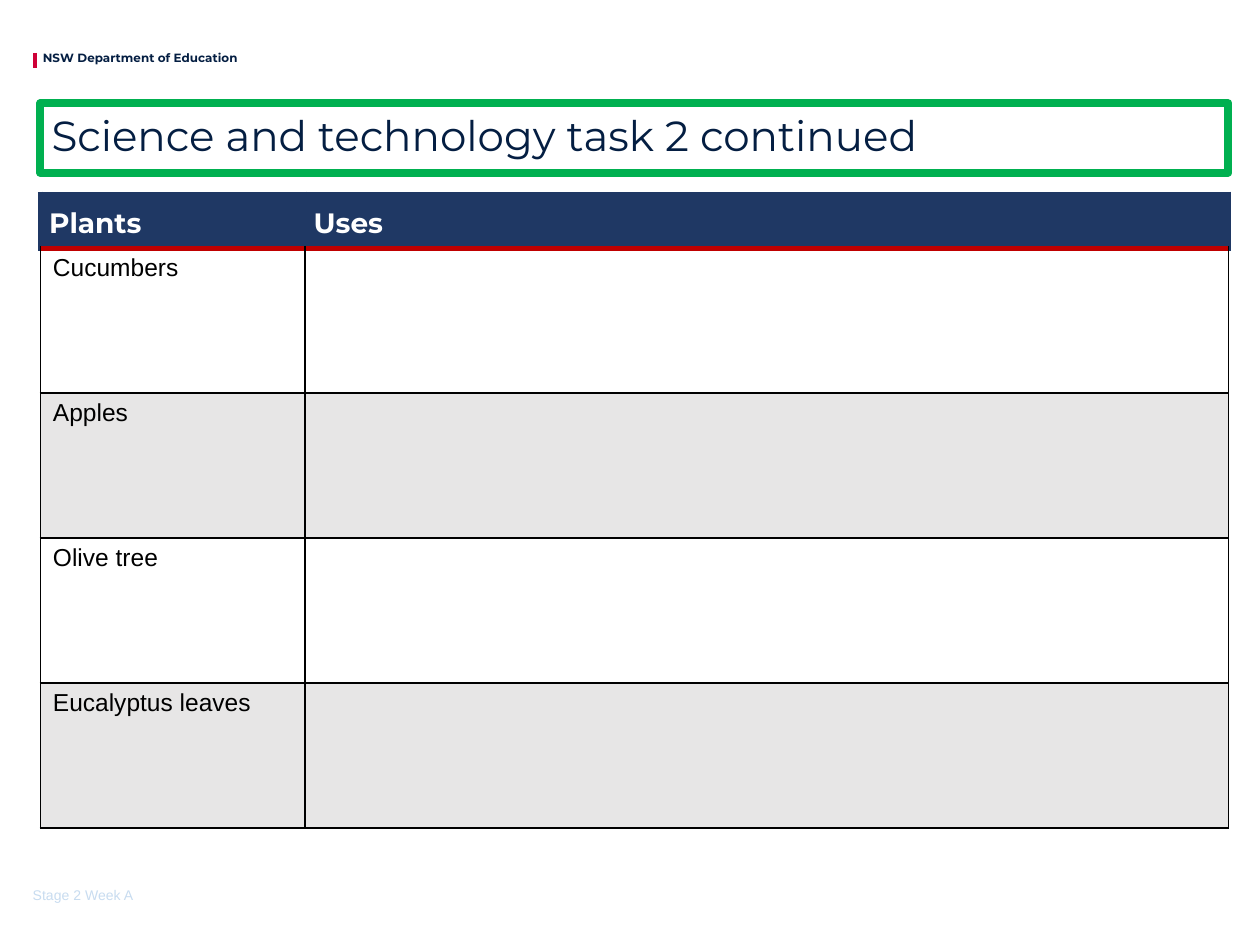
from typing import NamedTuple

from lxml.etree import SubElement
from pptx import Presentation
from pptx.dml.color import RGBColor
from pptx.enum.shapes import MSO_CONNECTOR, MSO_SHAPE
from pptx.enum.text import MSO_ANCHOR, PP_ALIGN
from pptx.oxml.ns import qn
from pptx.util import Inches, Pt

NAVY = RGBColor(0x04, 0x1E, 0x42)
HEADER_BLUE = RGBColor(0x1F, 0x38, 0x64)
RED = RGBColor(0xCE, 0x00, 0x37)
DARK_RED = RGBColor(0xC0, 0x00, 0x00)
GREEN = RGBColor(0x00, 0xB0, 0x50)
PALE_BLUE = RGBColor(0xC8, 0xDC, 0xF0)
GREY = RGBColor(0xE7, 0xE6, 0xE6)
BLACK = RGBColor(0x00, 0x00, 0x00)
WHITE = RGBColor(0xFF, 0xFF, 0xFF)

HEADINGS = ("Plants", "Uses")
PLANTS = ("Cucumbers", "Apples", "Olive tree", "Eucalyptus leaves")
COLUMN_WIDTHS = (2.1, 7.33)
HEADER_HEIGHT, ROW_HEIGHT = 0.43, 1.15


class TextStyle(NamedTuple):
    font: str
    size: float
    color: RGBColor
    bold: bool = False
    spacing: float = 1.0


class Border(NamedTuple):
    color: RGBColor
    width: float


class Label(NamedTuple):
    text: str
    box: tuple[float, float, float, float]
    anchor: MSO_ANCHOR
    style: TextStyle


TITLE_STYLE = TextStyle("Montserrat", 24, NAVY, spacing=0.9)
HEADING_STYLE = TextStyle("Montserrat", 16, WHITE, True, 1.15)
BODY_STYLE = TextStyle("Arial", 14, BLACK)
HEADER_EDGE = Border(HEADER_BLUE, 3)
HEADER_RULE = Border(DARK_RED, 3)
GRID = Border(BLACK, 1)

LABELS = (
    Label("NSW Department of Education", (0.34, 0.4, 2.03, 0.11),
          MSO_ANCHOR.TOP, TextStyle("Montserrat", 6.8, NAVY, True)),
    Label("Stage 2 Week A", (0.26, 6.77, 1.15, 0.4),
          MSO_ANCHOR.BOTTOM, TextStyle("Arial", 8, PALE_BLUE)),
)


def write(tf, text: str, style: TextStyle) -> None:
    p = tf.paragraphs[0]
    p.text = text
    p.alignment = PP_ALIGN.LEFT
    p.line_spacing = style.spacing
    p.font.name = style.font
    p.font.size = Pt(style.size)
    p.font.bold = style.bold
    p.font.color.rgb = style.color


def clear_margins(tf) -> None:
    tf.margin_left = tf.margin_top = tf.margin_right = tf.margin_bottom = 0


def add_label(s, label: Label) -> None:
    tf = s.shapes.add_textbox(*map(Inches, label.box)).text_frame
    tf.word_wrap = True
    tf.vertical_anchor = label.anchor
    clear_margins(tf)
    write(tf, label.text, label.style)


def add_accent(s) -> None:
    line = s.shapes.add_connector(
        MSO_CONNECTOR.STRAIGHT, Inches(0.28), Inches(0.42), Inches(0.28), Inches(0.54))
    line.line.color.rgb = RED
    line.line.width = Pt(2.5)
    SubElement(line._element.spPr, qn("a:effectLst"))


def add_title(s, text: str) -> None:
    sp = s.shapes.add_shape(
        MSO_SHAPE.RECTANGLE, Inches(0.32), Inches(0.82), Inches(9.43), Inches(0.55))
    sp.shadow.inherit = False
    sp.fill.background()
    sp.line.color.rgb = GREEN
    sp.line.width = Pt(4.5)
    SubElement(sp.line._get_or_add_ln(), qn("a:round"))
    tf = sp.text_frame
    tf.word_wrap = True
    tf.vertical_anchor = MSO_ANCHOR.MIDDLE
    clear_margins(tf)
    tf.margin_left = Inches(0.09)
    write(tf, text, TITLE_STYLE)


def style_cell(cell, fill: RGBColor, side: Border, top: Border, bottom: Border) -> None:
    tcPr = cell._tc.get_or_add_tcPr()
    for tag, border in (("lnL", side), ("lnR", side), ("lnT", top), ("lnB", bottom)):
        ln = SubElement(tcPr, qn(f"a:{tag}"), w=str(Pt(border.width)))
        paint = SubElement(ln, qn("a:solidFill"))
        SubElement(paint, qn("a:srgbClr"), val=str(border.color))
    cell.fill.solid()
    cell.fill.fore_color.rgb = fill


def add_plant_table(s) -> None:
    height = HEADER_HEIGHT + ROW_HEIGHT * len(PLANTS)
    table = s.shapes.add_table(
        len(PLANTS) + 1, len(HEADINGS), Inches(0.32), Inches(1.54),
        Inches(sum(COLUMN_WIDTHS)), Inches(height)).table
    for column, width in zip(table.columns, COLUMN_WIDTHS):
        column.width = Inches(width)
    for i, row in enumerate(table.rows):
        row.height = Inches(ROW_HEIGHT if i else HEADER_HEIGHT)

    for c, heading in enumerate(HEADINGS):
        cell = table.cell(0, c)
        style_cell(cell, HEADER_BLUE, HEADER_EDGE, HEADER_EDGE, HEADER_RULE)
        cell.vertical_anchor = MSO_ANCHOR.MIDDLE
        cell.margin_left = cell.margin_right = Inches(0.07)
        cell.margin_top = cell.margin_bottom = 0
        write(cell.text_frame, heading, HEADING_STYLE)

    for i, plant in enumerate(PLANTS, start=1):
        for c in range(len(HEADINGS)):
            style_cell(table.cell(i, c), WHITE if i % 2 else GREY, GRID,
                       HEADER_RULE if i == 1 else GRID, GRID)
        write(table.cell(i, 0).text_frame, plant, BODY_STYLE)


def main() -> None:
    prs = Presentation()
    prs.slide_width, prs.slide_height = Inches(10), Inches(7.5)
    s = prs.slides.add_slide(prs.slide_layouts[6])
    add_accent(s)
    add_title(s, "Science and technology task 2 continued")
    add_plant_table(s)
    for label in LABELS:
        add_label(s, label)
    prs.save("out.pptx")


if __name__ == "__main__":
    main()
